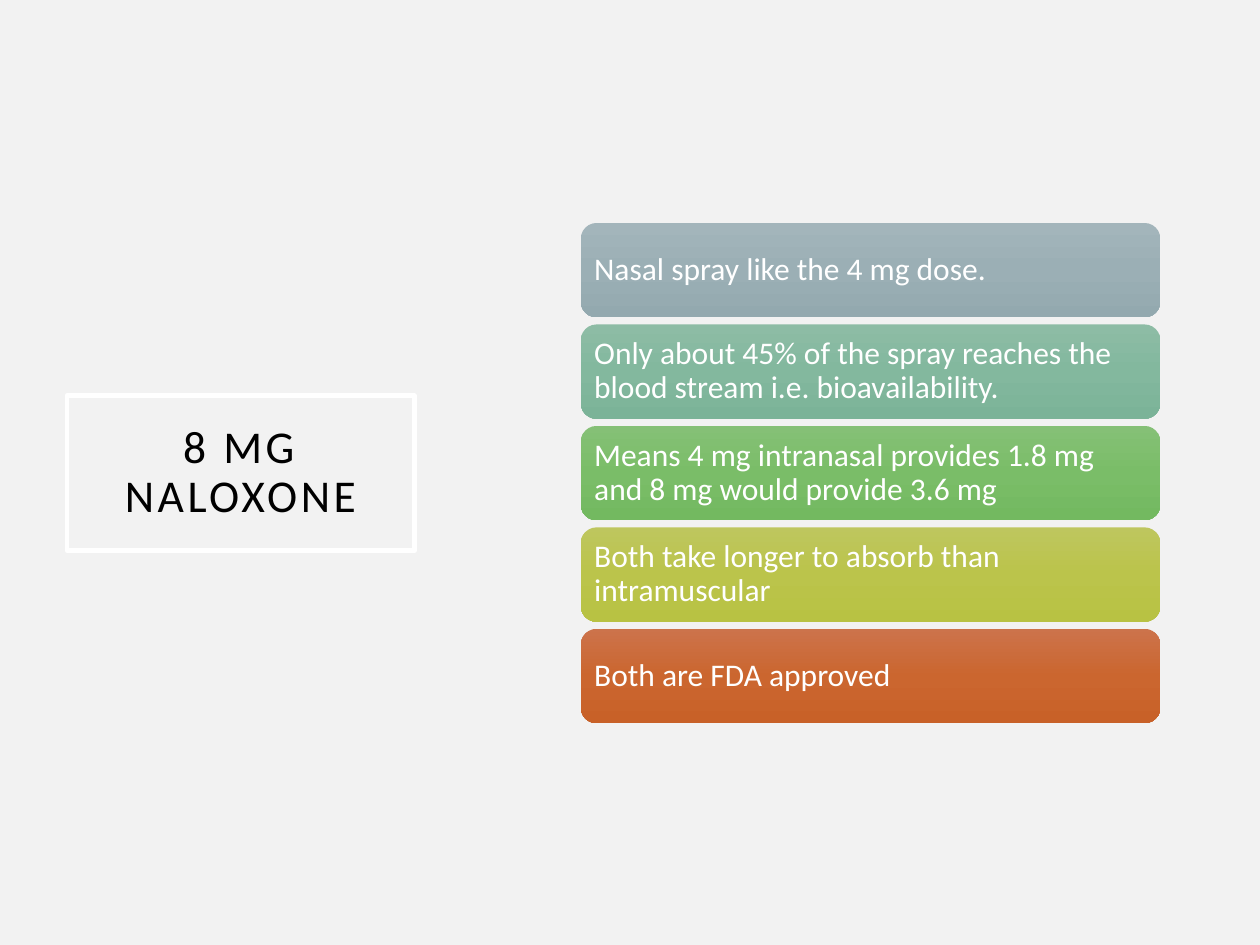
from copy import deepcopy

from pptx import Presentation
from pptx.dml.color import RGBColor
from pptx.enum.shapes import MSO_SHAPE as Shape
from pptx.enum.text import MSO_ANCHOR as Anchor, MSO_AUTO_SIZE as AutoSize, PP_ALIGN as Align
from pptx.oxml.ns import qn
from pptx.util import Inches, Pt

WIDTH, HEIGHT = 10, 7.5
FONT = "Calibri"
TITLE_BOX = (0.53, 3.14, 2.76, 1.23)
LIST_BOX = (4.61, 1.77, 4.6, 3.97)
BAR_SHARE = 0.93
FACTS = [
    ("Nasal spray like the 4 mg dose.", ("A3B5BB", "9BAFB5", "93A9AF")),
    ("Only about 45% of the spray reaches the blood stream i.e. bioavailability.",
     ("8DBCA5", "83B89E", "7BB398")),
    ("Means 4 mg intranasal provides 1.8 mg and 8 mg would provide 3.6 mg",
     ("85C076", "7ABD68", "73B960")),
    ("Both take longer to absorb than intramuscular", ("BEC65E", "BBC44B", "B8C243")),
    ("Both are FDA approved", ("CC734B", "CB662F", "C86128")),
]


def rgb(code):
    """Turn a hex string into a colour."""
    return RGBColor.from_string(code)


def write(sp, text, size, color, align, inset):
    """Fill a shape with one middle-anchored paragraph and return its run."""
    tf = sp.text_frame
    tf.word_wrap, tf.auto_size = True, AutoSize.NONE
    tf.vertical_anchor = Anchor.MIDDLE
    tf.margin_left = tf.margin_right = tf.margin_top = tf.margin_bottom = Inches(inset)
    p = tf.paragraphs[0]
    p.alignment, p.line_spacing = align, 0.9
    r = p.add_run()
    r.text = text
    r.font.name, r.font.size = FONT, Pt(size)
    r.font.color.rgb = rgb(color)
    return r


def shade(sp, colors):
    """Give a shape a top-to-bottom gradient of three even stops."""
    sp.fill.gradient()
    sp.fill.gradient_angle = 270
    stops = sp._element.spPr.find(qn("a:gradFill")).find(qn("a:gsLst"))
    stops.insert(1, deepcopy(stops[0]))
    for i, (stop, color) in enumerate(zip(sp.fill.gradient_stops, colors)):
        stop.position = i / 2
        stop.color.rgb = rgb(color)


def add_title(s, box, text):
    """Place the framed, letter-spaced title."""
    sp = s.shapes.title
    sp.left, sp.top, sp.width, sp.height = map(Inches, box)
    sp.line.color.rgb = rgb("FFFFFF")
    sp.line.width = Pt(2.5)
    r = write(sp, text, 26, "000000", Align.CENTER, 0.2)
    r.font._element.set("spc", "200")


def add_fact_list(s, box, facts):
    """Stack one gradient bar per fact with equal gaps down the box."""
    left, top, width, height = box
    pitch = height / (len(facts) - 1 + BAR_SHARE)
    for i, (text, colors) in enumerate(facts):
        bar = (left, top + i * pitch, width, pitch * BAR_SHARE)
        sp = s.shapes.add_shape(Shape.ROUNDED_RECTANGLE, *map(Inches, bar))
        sp.shadow.inherit = False
        sp.line.fill.background()
        shade(sp, colors)
        write(sp, text, 18, "FFFFFF", Align.LEFT, 0.07)


def main():
    """Build and save the slide."""
    prs = Presentation()
    prs.slide_width, prs.slide_height = Inches(WIDTH), Inches(HEIGHT)
    s = prs.slides.add_slide(prs.slide_layouts[5])
    s.background.fill.solid()
    s.background.fill.fore_color.rgb = rgb("F2F2F2")
    add_title(s, TITLE_BOX, "8 MG NALOXONE")
    add_fact_list(s, LIST_BOX, FACTS)
    prs.save("out.pptx")


if __name__ == "__main__":
    main()
